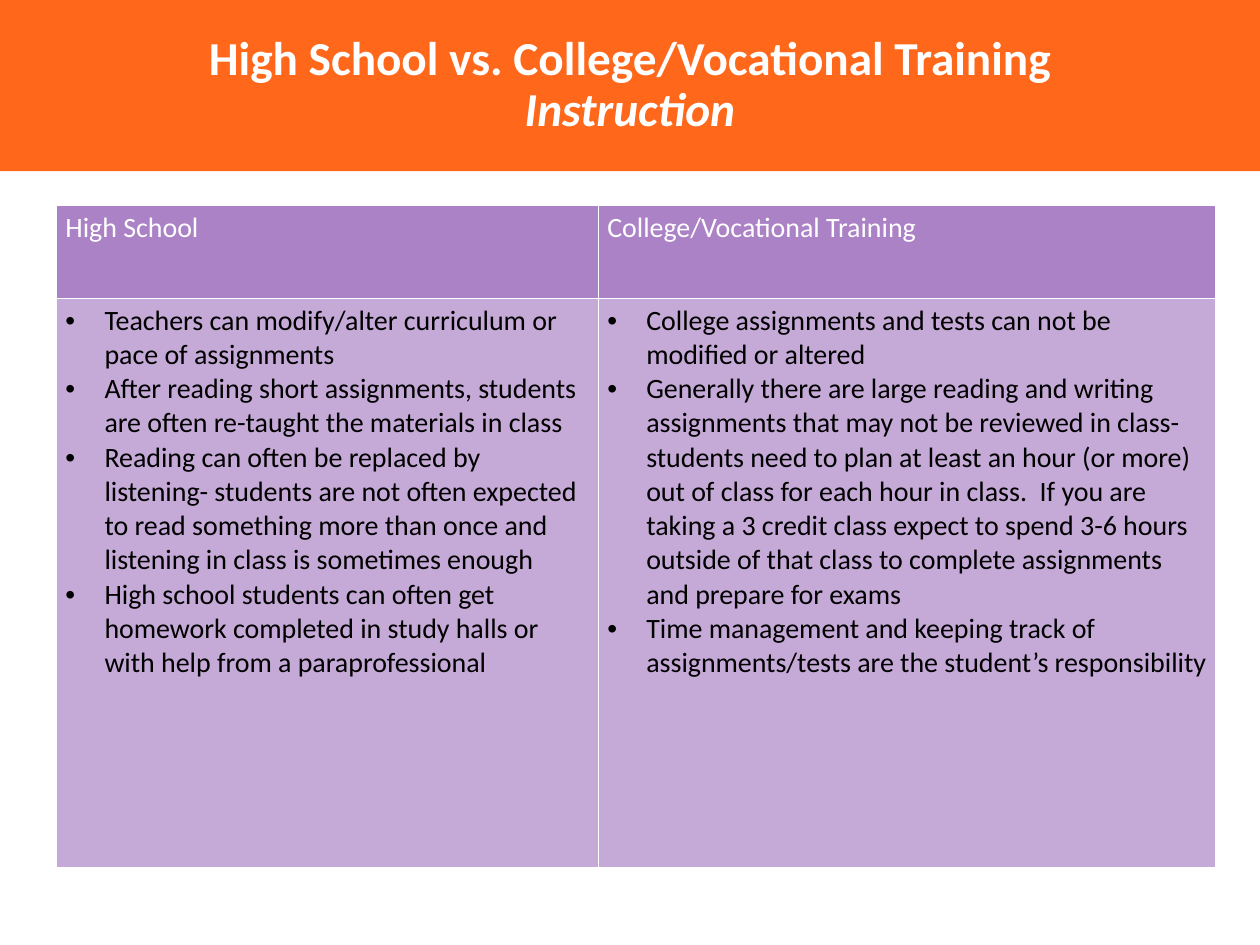
from lxml import etree
from pptx import Presentation
from pptx.dml.color import RGBColor
from pptx.enum.shapes import MSO_SHAPE
from pptx.enum.text import MSO_ANCHOR, PP_ALIGN
from pptx.oxml.ns import qn
from pptx.util import Inches, Pt

RECTANGLE = MSO_SHAPE.RECTANGLE
MIDDLE = MSO_ANCHOR.MIDDLE
CENTER = PP_ALIGN.CENTER

FONT = "Calibri"
COLORS = {
    "banner": "FF671B",
    "header": "AB82C5",
    "body": "C5A9D7",
    "light": "FFFFFF",
    "dark": "000000",
}
TITLE = "High School vs. College/Vocational Training"
SUBTITLE = "Instruction"
COLUMNS = [
    {
        "heading": "High School",
        "width": 4.3,
        "points": [
            "Teachers can modify/alter curriculum or pace of assignments",
            "After reading short assignments, students are often re-taught the materials in class",
            "Reading can often be replaced by listening- students are not often expected to read "
            "something more than once and listening in class is sometimes enough",
            "High school students can often get homework completed in study halls or with help "
            "from a paraprofessional",
        ],
    },
    {
        "heading": "College/Vocational Training",
        "width": 4.9,
        "points": [
            "College assignments and tests can not be modified or altered",
            "Generally there are large reading and writing assignments that may not be reviewed "
            "in class- students need to plan at least an hour (or more) out of class for each "
            "hour in class.  If you are taking a 3 credit class expect to spend 3-6 hours outside "
            "of that class to complete assignments and prepare for exams",
            "Time management and keeping track of assignments/tests are the student’s responsibility",
        ],
    },
]
TABLE_LEFT, TABLE_TOP = 0.45, 1.63
ROW_HEIGHTS = [0.74, 4.52]
INDENT = 0.31


def rgb(name):
    return RGBColor.from_string(COLORS[name])


def add_span(para, text, size, color, bold=False, italic=False):
    span = para.add_run()
    span.text = text
    font = span.font
    font.name, font.size, font.bold, font.italic = FONT, Pt(size), bold, italic
    font.color.rgb = rgb(color)


def add_bullet(para):
    properties = para._p.get_or_add_pPr()
    properties.set("marL", str(Inches(INDENT)))
    properties.set("indent", str(-Inches(INDENT)))
    etree.SubElement(properties, qn("a:buFont"), typeface="Arial")
    etree.SubElement(properties, qn("a:buChar"), char="•")


def style_cell(cell, fill):
    """Set margins, white borders and fill; borders must precede the fill in the XML."""
    cell.margin_left = cell.margin_right = Inches(0.07)
    cell.margin_top = cell.margin_bottom = Inches(0.04)
    properties = cell._tc.get_or_add_tcPr()
    for side in ("lnL", "lnR", "lnT", "lnB"):
        line = etree.SubElement(properties, qn(f"a:{side}"), w=str(Pt(1)))
        solid = etree.SubElement(line, qn("a:solidFill"))
        etree.SubElement(solid, qn("a:srgbClr"), val=COLORS["light"])
    cell.fill.solid()
    cell.fill.fore_color.rgb = rgb(fill)


def add_banner(page):
    banner = page.shapes.add_shape(RECTANGLE, 0, 0, Inches(10), Inches(1.36))
    banner.shadow.inherit = False
    banner.fill.solid()
    banner.fill.fore_color.rgb = rgb("banner")
    banner.line.fill.background()
    frame = banner.text_frame
    frame.word_wrap = True
    frame.vertical_anchor = MIDDLE
    para = frame.paragraphs[0]
    para.alignment = CENTER
    para.line_spacing = 0.9
    add_span(para, TITLE, 27, "light", bold=True)
    para.add_line_break()
    add_span(para, SUBTITLE, 27, "light", bold=True, italic=True)


def add_comparison(page):
    width = sum(column["width"] for column in COLUMNS)
    table = page.shapes.add_table(
        len(ROW_HEIGHTS), len(COLUMNS), Inches(TABLE_LEFT), Inches(TABLE_TOP),
        Inches(width), Inches(sum(ROW_HEIGHTS))).table
    for row, height in zip(table.rows, ROW_HEIGHTS):
        row.height = Inches(height)
    for index, column in enumerate(COLUMNS):
        table.columns[index].width = Inches(column["width"])
        heading, body = table.cell(0, index), table.cell(1, index)
        style_cell(heading, "header")
        style_cell(body, "body")
        add_span(heading.text_frame.paragraphs[0], column["heading"], 16, "light")
        frame = body.text_frame
        for number, point in enumerate(column["points"]):
            para = frame.add_paragraph() if number else frame.paragraphs[0]
            add_bullet(para)
            add_span(para, point, 16, "dark")


def main():
    deck = Presentation()
    deck.slide_width, deck.slide_height = Inches(10), Inches(7.5)
    page = deck.slides.add_slide(deck.slide_layouts[6])
    add_banner(page)
    add_comparison(page)
    deck.save("out.pptx")


if __name__ == "__main__":
    main()
